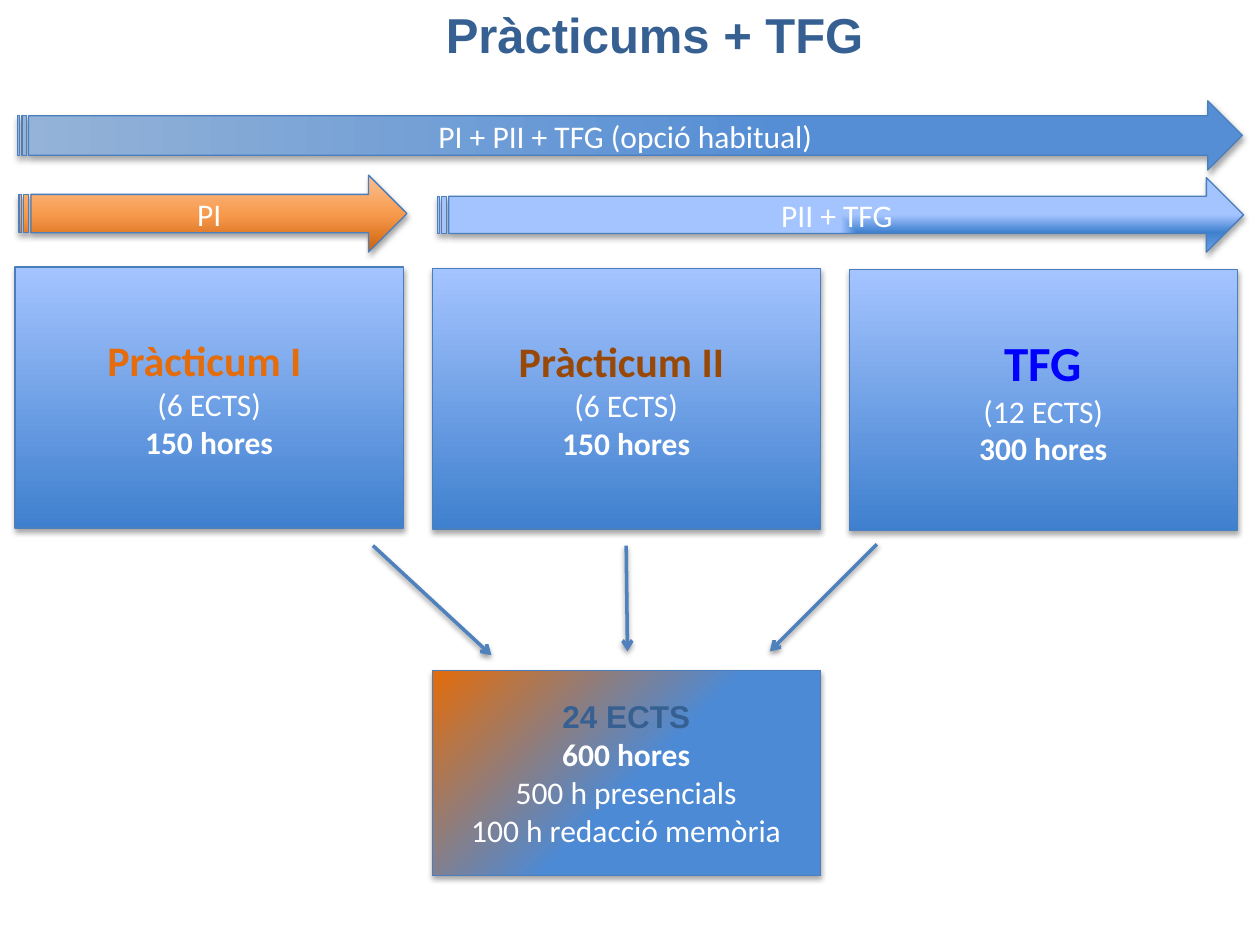
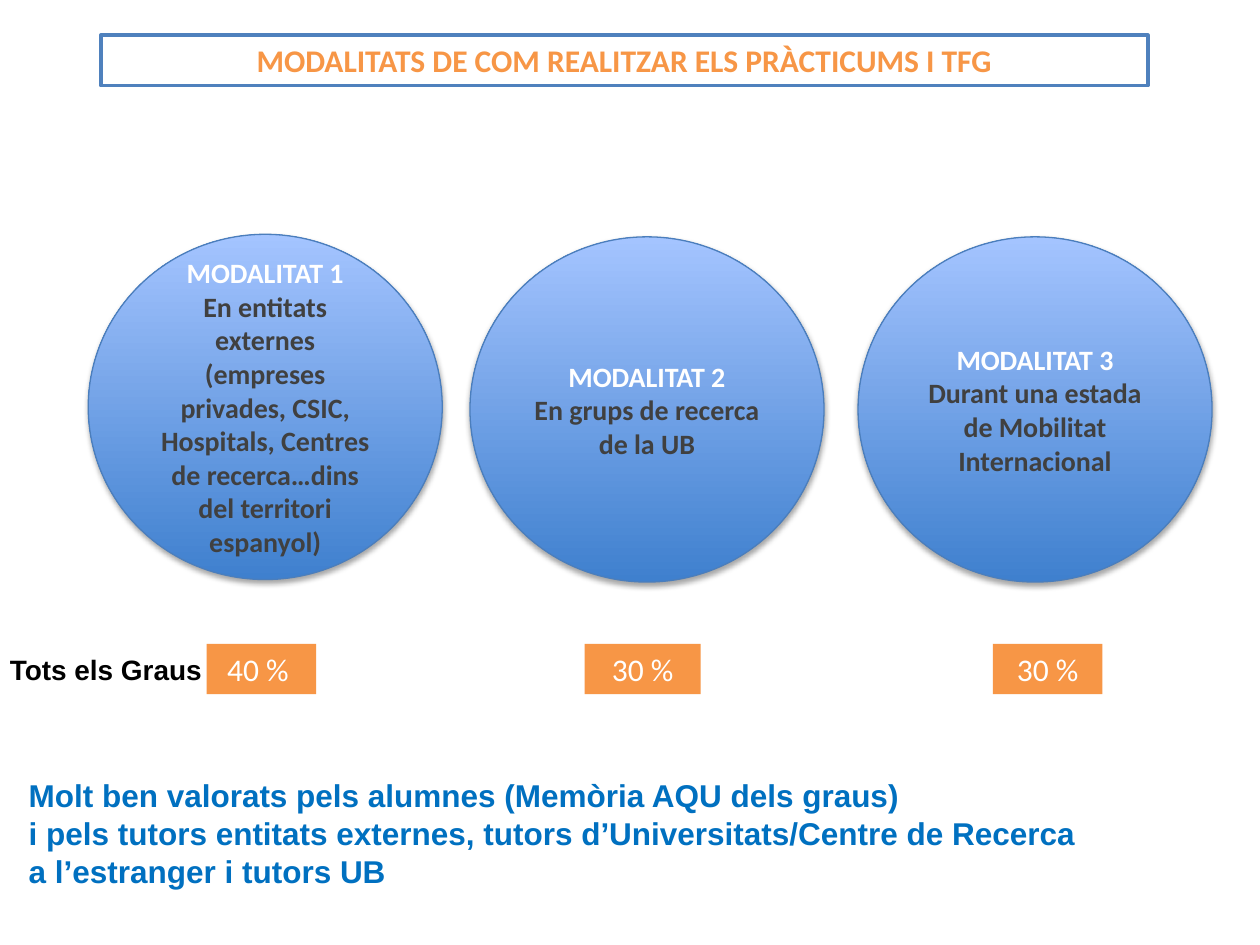
from collections import namedtuple
from dataclasses import dataclass

from lxml.etree import SubElement
from pptx import Presentation
from pptx.dml.color import RGBColor
from pptx.enum.shapes import MSO_CONNECTOR, MSO_SHAPE
from pptx.enum.text import MSO_ANCHOR, PP_ALIGN
from pptx.oxml.ns import qn
from pptx.util import Inches, Pt

Box = namedtuple("Box", "left top width height")
Line = namedtuple("Line", "text size color bold font", defaults=(False, "Calibri"))
Gradient = namedtuple("Gradient", "stops angle", defaults=(None,))


@dataclass(frozen=True)
class Theme:
    heading_font: str = "Arial"
    white: str = "FFFFFF"
    black: str = "000000"
    navy: str = "376092"
    outline: str = "4B7EBC"
    accent: str = "4F81BD"
    orange: str = "F79646"
    dark_orange: str = "E46C0A"
    brown: str = "984807"
    pure_blue: str = "0000FF"
    note_blue: str = "0070C0"
    charcoal: str = "404040"
    title: int = 28
    course: int = 24
    body: int = 18
    detail: int = 16
    blue_fade: Gradient = Gradient(((0, "3F80CE"), (100, "A4C4FF")), 270)
    total_fade: Gradient = Gradient(((0, "E46C0A"), (53, "4D8AD5")), 45)
    usual_fade: Gradient = Gradient(((0, "95B3D7"), (63, "558ED5")), 0)
    first_fade: Gradient = Gradient(((0, "CC6109"), (48, "F7994C"), (100, "FAC090")), 270)
    second_fade: Gradient = Gradient(((0, "6DA1E6"), (53, "3F80CE"), (100, "A4C4FF")))


THEME = Theme()


def inches(box):
    return [Inches(length) for length in box]


def write(frame, lines, align=PP_ALIGN.CENTER, anchor=MSO_ANCHOR.TOP, wrap=True):
    frame.word_wrap = wrap
    frame.vertical_anchor = anchor
    for index, line in enumerate(lines):
        paragraph = frame.paragraphs[0] if index == 0 else frame.add_paragraph()
        paragraph.text = line.text
        paragraph.alignment = align
        paragraph.font.name = line.font
        paragraph.font.size = Pt(line.size)
        paragraph.font.bold = line.bold
        paragraph.font.color.rgb = RGBColor.from_string(line.color)


def add_color(parent, color, alpha=None):
    node = SubElement(parent, qn("a:srgbClr"), val=color)
    if alpha is not None:
        SubElement(node, qn("a:alpha"), val=str(alpha * 1000))


def add_shadow(properties, opacity, distance):
    effects = properties.find(qn("a:effectLst"))
    if effects is None:
        effects = SubElement(properties, qn("a:effectLst"))
    shadow = SubElement(effects, qn("a:outerShdw"), blurRad=str(Pt(3.1)),
                        dist=str(Pt(distance)), dir="5400000", rotWithShape="0")
    add_color(shadow, THEME.black, opacity)


def fill_gradient(properties, gradient):
    fill = SubElement(properties, qn("a:gradFill"), rotWithShape="1")
    stops = SubElement(fill, qn("a:gsLst"))
    for position, color in gradient.stops:
        add_color(SubElement(stops, qn("a:gs"), pos=str(position * 1000)), color)
    if gradient.angle is None:
        corner = SubElement(fill, qn("a:path"), path="rect")
        SubElement(corner, qn("a:fillToRect"), l="100000", t="100000")
    else:
        SubElement(fill, qn("a:lin"), ang=str(gradient.angle * 60000), scaled="0")
    properties.find(qn("a:prstGeom")).addnext(fill)


def add_glossy(slide, preset, box, gradient, lines):
    shape = slide.shapes.add_shape(preset, *inches(box))
    fill_gradient(shape._element.spPr, gradient)
    shape.line.color.rgb = RGBColor.from_string(THEME.outline)
    shape.line.width = Pt(0.75)
    shape.shadow.inherit = False
    add_shadow(shape._element.spPr, 35, 1.8)
    write(shape.text_frame, lines, anchor=MSO_ANCHOR.MIDDLE)
    return shape


def add_label(slide, box, line, fill=None, outline=None):
    label = slide.shapes.add_shape(MSO_SHAPE.RECTANGLE, *inches(box))
    label.shadow.inherit = False
    if fill:
        label.fill.solid()
        label.fill.fore_color.rgb = RGBColor.from_string(fill)
    else:
        label.fill.background()
    if outline:
        label.line.color.rgb = RGBColor.from_string(outline)
        label.line.width = Pt(2)
    else:
        label.line.fill.background()
    write(label.text_frame, [line])


def add_text(slide, box, lines, align=PP_ALIGN.LEFT, wrap=False):
    text = slide.shapes.add_textbox(*inches(box))
    write(text.text_frame, lines, align, wrap=wrap)


def add_arrow(slide, start, end):
    arrow = slide.shapes.add_connector(MSO_CONNECTOR.STRAIGHT, *inches(start + end))
    arrow.line.color.rgb = RGBColor.from_string(THEME.accent)
    arrow.line.width = Pt(2)
    SubElement(arrow.line._get_or_add_ln(), qn("a:tailEnd"), type="arrow")
    add_shadow(arrow._element.spPr, 38, 1.6)


def add_paths(slide, area):
    paths = [
        ("PI", Box(0.01, 0.59, 3.08, 0.61), THEME.first_fade, 0.5),
        ("PII + TFG", Box(3.33, 0.61, 6.4, 0.59), THEME.second_fade, 0.5),
        ("PI + PII + TFG (opció habitual)", Box(0, 0, area.width, 0.55), THEME.usual_fade, 0.57),
    ]
    for text, place, gradient, thickness in paths:
        box = Box(area.left + place.left, area.top + place.top, place.width, place.height)
        path_arrow = add_glossy(slide, MSO_SHAPE.STRIPED_RIGHT_ARROW, box, gradient,
                                [Line(text, THEME.body, THEME.white)])
        path_arrow.adjustments[0] = thickness


def add_courses(slide, area):
    courses = [
        ("Pràcticum I ", THEME.course, THEME.dark_orange, 6, 150),
        ("Pràcticum II ", THEME.course, THEME.brown, 6, 150),
        ("TFG", THEME.title, THEME.pure_blue, 12, 300),
    ]
    width = 3.08
    pitch = (area.width - width) / (len(courses) - 1)
    for index, (name, size, color, credits, hours) in enumerate(courses):
        box = Box(area.left + index * pitch, area.top + index * 0.01, width, area.height)
        add_glossy(slide, MSO_SHAPE.RECTANGLE, box, THEME.blue_fade, [
            Line(name, size, color, True),
            Line(f"({credits} ECTS)", THEME.body, THEME.white),
            Line(f"{hours} hores", THEME.body, THEME.white, True),
        ])


def add_total(slide, area):
    center = area.left + area.width / 2
    for start, end in [((-2.01, -0.99), (-1.07, -0.12)),
                       ((0, -0.99), (0.01, -0.15)),
                       ((1.99, -1), (1.14, -0.15))]:
        add_arrow(slide, (center + start[0], area.top + start[1]),
                  (center + end[0], area.top + end[1]))
    add_glossy(slide, MSO_SHAPE.RECTANGLE, area, THEME.total_fade, [
        Line("24 ECTS", THEME.body, THEME.navy, True, THEME.heading_font),
        Line("600 hores", THEME.body, THEME.white, True),
        Line("500 h presencials", THEME.body, THEME.white),
        Line("100 h redacció memòria", THEME.body, THEME.white),
    ])


def add_modalities(slide, area):
    modalities = [
        (0, -0.02, "En entitats externes (empreses privades, CSIC, Hospitals, "
                   "Centres de recerca…dins del territori espanyol)"),
        (3.03, 0, "En grups de recerca de la UB"),
        (6.11, 0, "Durant una estada de Mobilitat Internacional"),
    ]
    for number, (left, top, description) in enumerate(modalities, 1):
        box = Box(area.left + left, area.top + top, 2.81, area.height)
        add_glossy(slide, MSO_SHAPE.OVAL, box, THEME.blue_fade, [
            Line(f"MODALITAT {number}", THEME.detail, THEME.white, True),
            Line(description, THEME.detail, THEME.charcoal, True),
        ])


def add_shares(slide, area):
    add_text(slide, Box(area.left, area.top + 0.02, 1.75, 0.37),
             [Line("Tots els Graus", THEME.detail, THEME.black, True, THEME.heading_font)])
    for left, width, share in [(1.66, 0.87, "40 % "), (4.66, 0.92, "30 %"), (7.9, 0.87, "30 %")]:
        add_label(slide, Box(area.left + left, area.top, width, area.height),
                  Line(share, THEME.body, THEME.white), fill=THEME.orange)


def build_overview(slide):
    add_text(slide, Box(1.13, -0.01, 8.13, 0.57),
             [Line("Pràcticums + TFG", THEME.title, THEME.navy, True, THEME.heading_font)],
             PP_ALIGN.CENTER, wrap=True)
    add_courses(slide, Box(0.12, 2.12, 9.7, 2.07))
    add_total(slide, Box(3.43, 5.32, 3.08, 1.63))
    add_paths(slide, Box(0.14, 0.8, 9.72, 1.2))


def build_modalities(slide):
    add_label(slide, Box(0.8, 0.28, 8.31, 0.4),
              Line("MODALITATS DE COM REALITZAR ELS PRÀCTICUMS I TFG",
                   THEME.body, THEME.orange, True),
              outline=THEME.accent)
    add_modalities(slide, Box(0.7, 1.88, 8.92, 2.74))
    add_shares(slide, Box(-0.02, 5.11, 8.77, 0.4))
    remarks = [
        "Molt ben valorats pels alumnes (Memòria AQU dels graus)",
        "i pels tutors entitats externes, tutors d’Universitats/Centre de Recerca",
        "a l’estranger i tutors UB",
    ]
    add_text(slide, Box(0.13, 6.11, 8.66, 1.01),
             [Line(remark, THEME.body, THEME.note_blue, True, THEME.heading_font)
              for remark in remarks])


def main():
    deck = Presentation()
    deck.slide_width = Inches(10)
    deck.slide_height = Inches(7.5)
    for build in (build_overview, build_modalities):
        build(deck.slides.add_slide(deck.slide_layouts[6]))
    deck.save("out.pptx")


if __name__ == "__main__":
    main()
